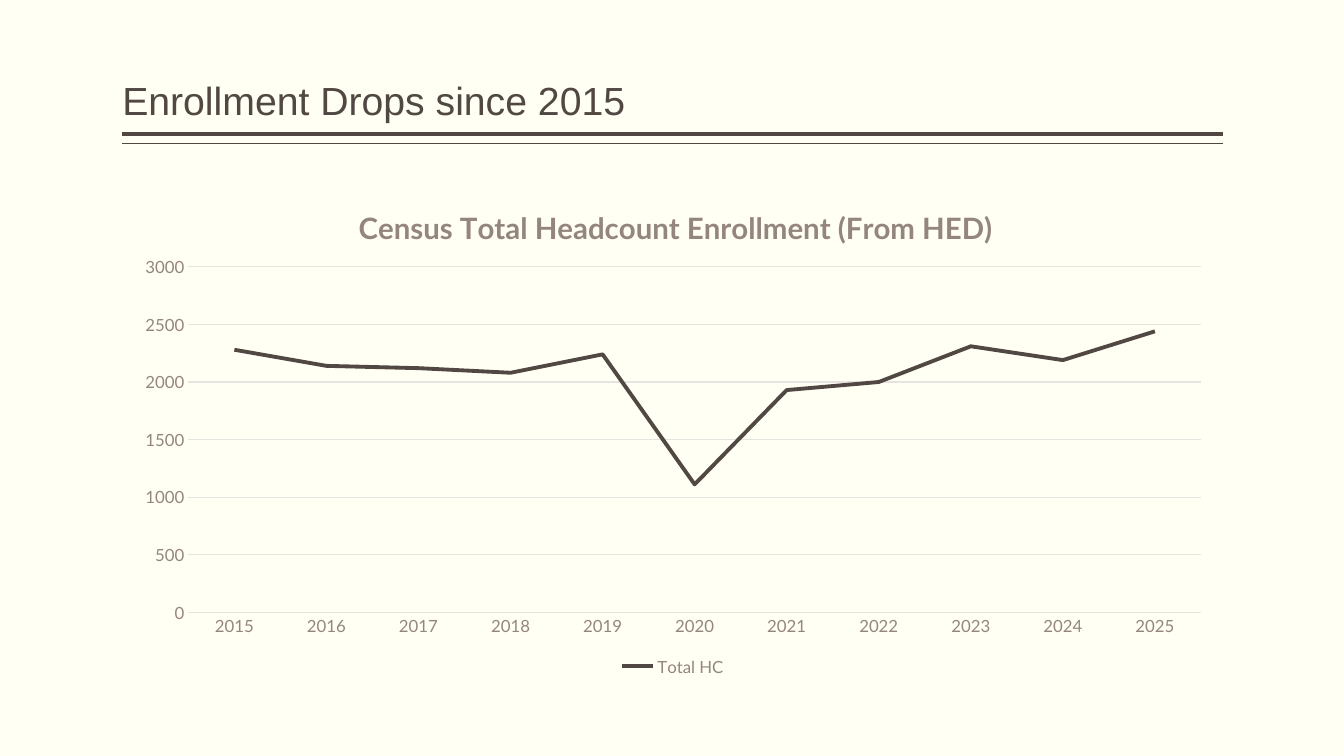
from lxml import etree
from pptx import Presentation
from pptx import util as u
from pptx.chart import data
from pptx.dml import color
from pptx.enum import chart as charts, shapes, text
from pptx.oxml import ns, parse_xml

WIDTH, HEIGHT = u.Inches(13.33), u.Inches(7.5)
LEFT, RIGHT = 0.091, 0.91
DARK, MUTED, PALE, CREAM = "514843", "94867E", "E6E3E1", "FFFFF3"
HEADCOUNT = {
    2015: 2280, 2016: 2140, 2017: 2120, 2018: 2080, 2019: 2240, 2020: 1110,
    2021: 1930, 2022: 2000, 2023: 2310, 2024: 2190, 2025: 2440,
}


def rgb(value):
    return color.RGBColor.from_string(value)


def across(share):
    return round(WIDTH * share)


def down(share):
    return round(HEIGHT * share)


def style_font(font, size, hex_color, name="Lato", bold=False):
    font.size, font.name, font.bold = u.Pt(size), name, bold
    font.color.rgb = rgb(hex_color)


def style_line(line, hex_color, width):
    line.color.rgb = rgb(hex_color)
    line.width = u.Pt(width)


def add_rule(slide, top, width):
    rule = slide.shapes.add_connector(
        shapes.MSO_CONNECTOR.STRAIGHT, across(RIGHT), down(top), across(LEFT), down(top))
    style_line(rule.line, DARK, width)
    etree.SubElement(rule._element.spPr, ns.qn("a:effectLst"))


def add_heading(slide, wording):
    box = slide.shapes.add_textbox(
        across(LEFT), down(0.01), across(RIGHT - LEFT), down(0.16))
    frame = box.text_frame
    frame.word_wrap = True
    frame.vertical_anchor = text.MSO_ANCHOR.BOTTOM
    frame.margin_left = frame.margin_right = 0
    paragraph = frame.paragraphs[0]
    paragraph.text = wording
    paragraph.line_spacing = 0.9
    style_font(paragraph.font, 28, DARK, "Arial")


def set_layout(parent, after, inner=False, **shares):
    for old in parent.findall(ns.qn("c:layout")):
        parent.remove(old)
    target = '<c:layoutTarget val="inner"/>' if inner else ""
    modes = "".join(f'<c:{key}Mode val="edge"/>' for key in "xy")
    places = "".join(f'<c:{key} val="{share}"/>' for key, share in shares.items())
    layout = parse_xml(
        f'<c:layout {ns.nsdecls("c")}><c:manualLayout>{target}{modes}{places}'
        '</c:manualLayout></c:layout>')
    if after is None:
        parent.insert(0, layout)
    else:
        after.addnext(layout)


def style_axis(axis):
    axis.major_tick_mark = axis.minor_tick_mark = charts.XL_TICK_MARK.NONE
    style_font(axis.tick_labels.font, 12, MUTED)


def add_line_chart(slide, title, series_name, values):
    chart_data = data.CategoryChartData()
    chart_data.categories = [str(year) for year in values]
    chart_data.add_series(series_name, values.values())
    chart = slide.shapes.add_chart(
        charts.XL_CHART_TYPE.LINE, across(LEFT), down(0.233),
        across(RIGHT - LEFT), down(0.667), chart_data).chart
    style_font(chart.font, 10, DARK)

    chart.has_title = True
    paragraph = chart.chart_title.text_frame.paragraphs[0]
    paragraph.text = title
    style_font(paragraph.font, 21, MUTED, bold=True)
    chart.chart_title.include_in_layout = False
    title_element = chart.chart_title._element
    set_layout(title_element, title_element.find(ns.qn("c:tx")), x=0.21, y=0.05)
    plot_area = chart._chartSpace.chart.plotArea
    set_layout(plot_area, None, inner=True, x=0.06, y=0.18, w=0.92, h=0.685)

    chart.has_legend = True
    chart.legend.position = charts.XL_LEGEND_POSITION.BOTTOM
    chart.legend.include_in_layout = False
    style_font(chart.legend.font, 12, MUTED)

    style_axis(chart.category_axis)
    style_line(chart.category_axis.format.line, PALE, 1)
    value_axis = chart.value_axis
    style_axis(value_axis)
    value_axis.format.line.fill.background()
    value_axis.minimum_scale, value_axis.maximum_scale = 0, 3000
    value_axis.major_unit = 500
    style_line(value_axis.major_gridlines.format.line, PALE, 0.75)

    chart.plots[0].vary_by_categories = False
    series = chart.plots[0].series[0]
    series.smooth = False
    series.marker.style = charts.XL_MARKER_STYLE.NONE
    style_line(series.format.line, DARK, 2.75)


def main():
    presentation = Presentation()
    presentation.slide_width, presentation.slide_height = WIDTH, HEIGHT
    slide = presentation.slides.add_slide(presentation.slide_layouts[6])
    slide.background.fill.solid()
    slide.background.fill.fore_color.rgb = rgb(CREAM)
    for top, width in ((0.177, 3), (0.19, 1)):
        add_rule(slide, top, width)
    add_heading(slide, "Enrollment Drops since 2015")
    add_line_chart(
        slide, "Census Total Headcount Enrollment (From HED)", "Total HC", HEADCOUNT)
    presentation.save("out.pptx")


if __name__ == "__main__":
    main()
